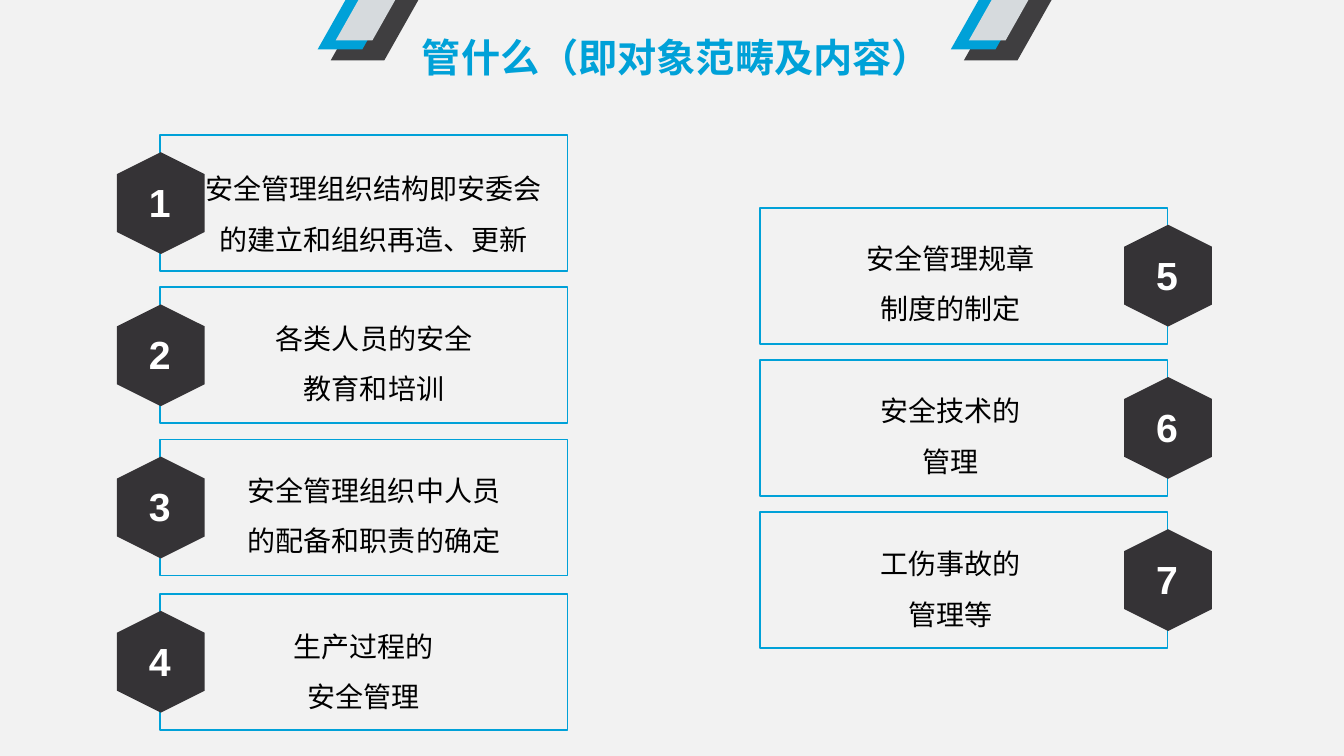
from lxml import etree
from pptx import Presentation
from pptx import util as u
from pptx.dml.color import RGBColor
from pptx.enum import shapes, text
from pptx.oxml.ns import qn


def rgb(value):
    """Turn a hex string into a colour."""
    return RGBColor.from_string(value)


class Deck:
    """Hold the style and the current slide, and draw its elements."""

    BLUE, DARK, CHARCOAL, SILVER = "00A1D8", "353336", "3F3E40", "D6DADD"
    BLACK, WHITE, PAPER = "000000", "FFFFFF", "F2F2F2"
    CJK, LATIN = "Noto Sans CJK SC", "Arial"

    def __init__(self):
        """Start a presentation with one blank slide."""
        self.prs = Presentation()
        self.prs.slide_width, self.prs.slide_height = u.Inches(13.33), u.Inches(7.5)
        self.s = self.prs.slides.add_slide(self.prs.slide_layouts[6])
        self.s.background.fill.solid()
        self.s.background.fill.fore_color.rgb = rgb(self.PAPER)

    def shape(self, kind, x, y, w, h, fill=None, line=None, parent=None):
        """Add a preset shape with an optional fill and outline."""
        parent = parent or self.s
        sp = parent.shapes.add_shape(kind, *map(u.Inches, (x, y, w, h)))
        sp.shadow.inherit = False
        if fill:
            sp.fill.solid()
            sp.fill.fore_color.rgb = rgb(fill)
        else:
            sp.fill.background()
        if line:
            sp.line.color.rgb = rgb(line)
            sp.line.width = u.Pt(1.25)
        else:
            sp.line.fill.background()
        return sp

    def label(self, words, x, y, w, h, size, color, font, bold=False, spacing=1.0):
        """Add a centred text box with one paragraph per line of words."""
        tf = self.s.shapes.add_textbox(*map(u.Inches, (x, y, w, h))).text_frame
        tf.word_wrap = True
        tf.text = words
        for p in tf.paragraphs:
            p.alignment = text.PP_ALIGN.CENTER
            p.line_spacing = spacing
            p.font.size, p.font.bold, p.font.name = u.Pt(size), bold, font
            p.font.color.rgb = rgb(color)
            defaults = p._p.get_or_add_pPr().find(qn("a:defRPr"))
            etree.SubElement(defaults, qn("a:ea"), typeface=font)

    def card(self, number, x, y, badge_x, words, text_x, text_y, text_w):
        """Add an outlined card with its numbered hexagon badge."""
        self.shape(shapes.MSO_SHAPE.RECTANGLE, x, y, 4.04, 1.35, line=self.BLUE)
        badge = self.shape(shapes.MSO_SHAPE.HEXAGON, badge_x - 0.5, y + 0.24, 1.01, 0.87, self.DARK)
        badge.rotation = 90
        self.label(words, text_x, text_y, text_w, 1.05, 20, self.BLACK, self.CJK, spacing=1.5)
        self.label(str(number), badge_x - 0.23, y + 0.38, 0.45, 0.57, 28, self.WHITE, self.LATIN, True)

    def ornament(self, x):
        """Add a group of three stacked slanted bars at the top edge."""
        group = self.s.shapes.add_group_shape()
        bars = [(0.13, 0.87, 0.6, self.CHARCOAL), (0, 0.72, 0.49, self.BLUE),
                (0.18, 0.59, 0.4, self.SILVER)]
        for dx, w, h, fill in bars:
            sp = self.shape(shapes.MSO_SHAPE.PARALLELOGRAM, x + dx, 0, w, h, fill, parent=group)
            sp.adjustments[0] = 0.564


def main():
    """Build and save the slide."""
    deck = Deck()
    left, right = (1.59, 1.59), (7.54, 11.58)
    cards = [
        (left, 1.34, "安全管理组织结构即安委会的建立和组织再造、更新", 1.92, 1.49, 3.57),
        (left, 2.85, "各类人员的安全教育和培训", 2.55, 2.97, 2.32),
        (left, 4.36, "安全管理组织中人员的配备和职责的确定", 2.26, 4.48, 2.9),
        (left, 5.89, "生产过程的\n安全管理", 2.67, 6.03, 1.87),
        (right, 2.06, "安全管理规章\n制度的制定", 8.31, 2.18, 2.23),
        (right, 3.57, "安全技术的管理", 8.57, 3.69, 1.72),
        (right, 5.08, "工伤事故的\n管理等", 8.4, 5.21, 2.06),
    ]
    for number, ((x, badge_x), y, words, *place) in enumerate(cards, 1):
        deck.card(number, x, y, badge_x, words, *place)
    deck.label(" 管什么（即对象范畴及内容）", 3.51, 0.28, 6.31, 0.57, 28, deck.BLUE, deck.CJK, True)
    for x in (3.15, 9.43):
        deck.ornament(x)
    deck.prs.save("out.pptx")


if __name__ == "__main__":
    main()
